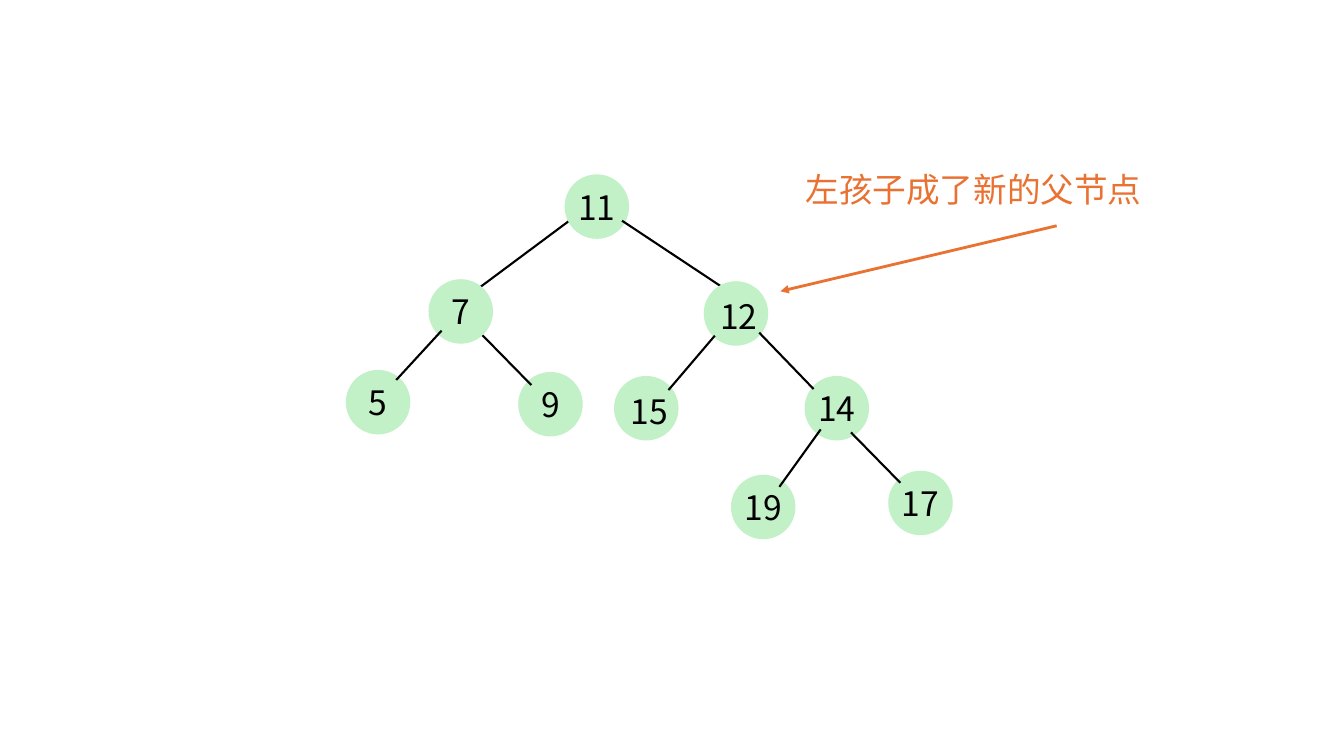
"""Draw a binary search tree whose left child has become the new parent node."""
from dataclasses import dataclass

from lxml import etree
from pptx import Presentation
from pptx.dml.color import RGBColor
from pptx.enum.shapes import MSO_CONNECTOR, MSO_SHAPE
from pptx.enum.text import MSO_ANCHOR, MSO_AUTO_SIZE, PP_ALIGN
from pptx.oxml.ns import qn
from pptx.shapes.connector import Connector
from pptx.slide import Slide
from pptx.text.text import TextFrame
from pptx.util import Inches, Pt

STRAIGHT = MSO_CONNECTOR.STRAIGHT
ELLIPSE = MSO_SHAPE.OVAL
CENTER = PP_ALIGN.CENTER
LEFT = PP_ALIGN.LEFT
MIDDLE = MSO_ANCHOR.MIDDLE
FIT_SHAPE = MSO_AUTO_SIZE.SHAPE_TO_FIT_TEXT

FONT = "Noto Sans CJK SC"
FONT_SIZE = 24
DIAMETER = 0.64
GREEN = "C2F1C8"
BLACK = "000000"
ORANGE = "E97132"


@dataclass(frozen=True)
class Node:
    """A numbered circle; nudge shifts its number right and down."""
    key: str
    left: float
    top: float
    nudge: float = 0


@dataclass(frozen=True)
class Edge:
    """A straight line between two points."""
    start: tuple[float, float]
    end: tuple[float, float]
    color: str = BLACK
    width: float = 1.5


TREE: list[Node | Edge] = [
    Node("14", 7.98, 3.73),
    Node("9", 5.14, 3.69),
    Edge((5.66, 2.18), (4.76, 2.85)),
    Node("5", 3.43, 3.67),
    Edge((5.27, 3.82), (4.76, 3.3)),
    Node("17", 8.81, 4.67),
    Edge((8.93, 4.79), (8.44, 4.29)),
    Node("11", 5.6, 1.73),
    Edge((7.18, 2.86), (6.17, 2.19)),
    Node("12", 6.98, 2.79, 0.03),
    Edge((7.53, 3.3), (8.07, 3.86)),
    Node("7", 4.25, 2.77),
    Edge((4.38, 3.28), (3.93, 3.77)),
    Node("19", 7.25, 4.71),
    Edge((7.73, 4.83), (8.14, 4.26)),
    Node("15", 6.09, 3.73, 0.03),
    Edge((6.63, 3.87), (7.09, 3.33)),
]
CALLOUT_ARROW = Edge((10.48, 2.24), (7.74, 2.89), ORANGE, 2)


def rgb(color: str) -> RGBColor:
    """Turn a hex string into a colour."""
    return RGBColor.from_string(color)


def write(frame: TextFrame, text: str, color: str, align: PP_ALIGN) -> None:
    """Fill a text frame with one unwrapped, formatted line."""
    frame.text = text
    frame.word_wrap = False
    frame.vertical_anchor = MIDDLE
    paragraph = frame.paragraphs[0]
    paragraph.alignment = align
    font = paragraph.runs[0].font
    font.name = FONT
    font.size = Pt(FONT_SIZE)
    font.color.rgb = rgb(color)
    properties = paragraph.runs[0]._r.get_or_add_rPr()
    etree.SubElement(properties, qn("a:ea")).set("typeface", FONT)


def draw_node(slide: Slide, node: Node) -> None:
    """Draw a circle with its number."""
    circle = slide.shapes.add_shape(
        ELLIPSE, Inches(node.left), Inches(node.top), Inches(DIAMETER), Inches(DIAMETER)
    )
    circle.shadow.inherit = False
    circle.fill.solid()
    circle.fill.fore_color.rgb = rgb(GREEN)
    circle.line.fill.background()
    frame = circle.text_frame
    frame.margin_left = frame.margin_top = Inches(2 * node.nudge)
    frame.margin_right = frame.margin_bottom = 0
    write(frame, node.key, BLACK, CENTER)


def draw_edge(slide: Slide, edge: Edge) -> Connector:
    """Draw a plain line without a shadow."""
    points = [Inches(value) for value in edge.start + edge.end]
    connector = slide.shapes.add_connector(STRAIGHT, *points)
    connector.line.color.rgb = rgb(edge.color)
    connector.line.width = Pt(edge.width)
    etree.SubElement(connector._element.spPr, qn("a:effectLst"))
    return connector


def draw_callout(slide: Slide) -> None:
    """Draw the orange remark and its arrow to the new parent."""
    arrow = draw_edge(slide, CALLOUT_ARROW)
    etree.SubElement(arrow.line._get_or_add_ln(), qn("a:tailEnd")).set("type", "triangle")
    remark = slide.shapes.add_textbox(Inches(7.89), Inches(1.63), Inches(3.57), Inches(0.5))
    write(remark.text_frame, "左孩子成了新的父节点", ORANGE, LEFT)
    remark.text_frame.auto_size = FIT_SHAPE


def main() -> None:
    """Build and save the slide."""
    presentation = Presentation()
    presentation.slide_width = Inches(13.33)
    presentation.slide_height = Inches(7.5)
    slide = presentation.slides.add_slide(presentation.slide_layouts[6])
    for part in TREE:
        if isinstance(part, Node):
            draw_node(slide, part)
        else:
            draw_edge(slide, part)
    draw_callout(slide)
    presentation.save("out.pptx")


if __name__ == "__main__":
    main()
